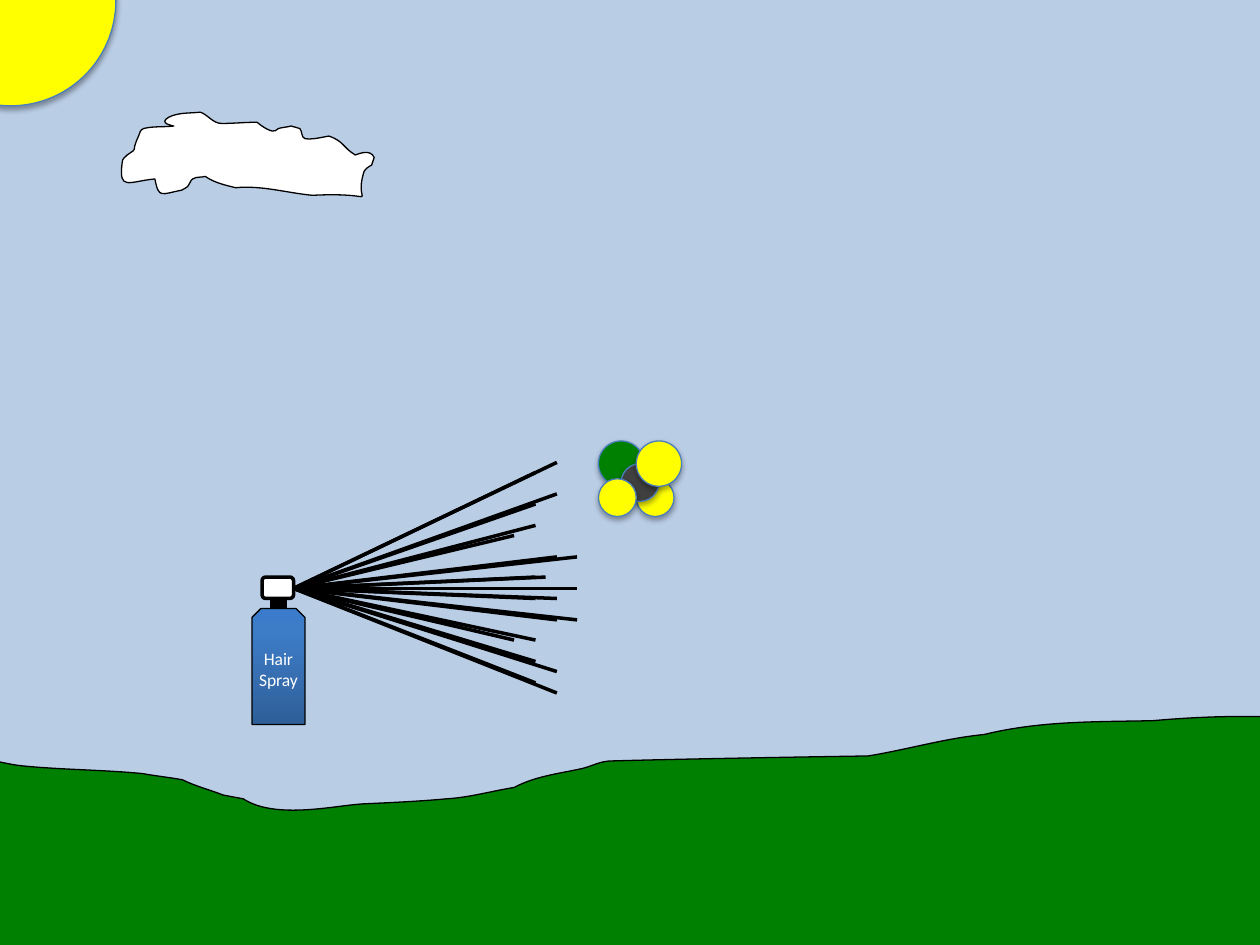
"""Build a slide of a hair spray can and a drifting molecule in a landscape."""
from copy import deepcopy
from dataclasses import dataclass

from lxml import etree
from pptx import Presentation
from pptx.dml.color import RGBColor
from pptx.enum.shapes import MSO_CONNECTOR, MSO_SHAPE
from pptx.enum.text import MSO_ANCHOR, PP_ALIGN
from pptx.oxml.ns import qn
from pptx.util import Inches, Pt

OVAL = MSO_SHAPE.OVAL
CAN = MSO_SHAPE.SNIP_2_SAME_RECTANGLE
NOZZLE = MSO_SHAPE.ROUNDED_RECTANGLE
STRAIGHT = MSO_CONNECTOR.STRAIGHT
MIDDLE = MSO_ANCHOR.MIDDLE
CENTER = PP_ALIGN.CENTER

COLORS = {
    "sky": "B9CDE5", "white": "FFFFFF", "black": "000000", "green": "008000",
    "yellow": "FFFF00", "carbon": "404040", "rim": "4B7EBC",
    "can_dark": "2F5F99", "can_mid": "3D7CC7", "can_light": "3A7CCB",
}
CAN_STOPS = [(0, "can_dark"), (0.8, "can_mid"), (1, "can_light")]
FRAME = {"margin_left": 0, "margin_top": 0, "margin_right": 0,
         "margin_bottom": 0, "word_wrap": True, "vertical_anchor": MIDDLE}
FONT = {"name": "Calibri", "size": Pt(10)}
SHADOW = {"blurRad": "40000", "dist": "23000", "dir": "5400000", "rotWithShape": "0"}


@dataclass
class Ball:
    x: float
    y: float
    size: float
    color: str


@dataclass
class Curve:
    color: str
    start: tuple[float, float]
    beziers: list[tuple[float, ...]]


SUN = Ball(-0.75, -0.83, 1.67, "yellow")
ATOMS = [
    Ball(5.05, 3.8, 0.3, "yellow"),
    Ball(4.75, 3.5, 0.36, "green"),
    Ball(4.93, 3.68, 0.3, "carbon"),
    Ball(5.05, 3.5, 0.36, "yellow"),
    Ball(4.75, 3.8, 0.3, "yellow"),
]
JET = (2.33, 4.67)
SPRAYS = [
    [(4.42, 3.67), (4.42, 5.5), (4.58, 4.67), (4.08, 5.08), (4.08, 4.25), (4.58, 4.92),
     (4.42, 4.75), (4.25, 5.25), (4.25, 4), (4.58, 4.42), (4.33, 4.58)],
    [(4.25, 3.75), (4.42, 4.67), (4.25, 5.08), (4.25, 4.17), (4.42, 4.92), (4.25, 4.75),
     (4.42, 5.33), (4.25, 5.42), (4.42, 3.92), (4.42, 4.42), (4.25, 4.58)],
]
CLOUD = Curve("white", (1.38, 1), [
    (1.3, 1.01, 1.22, 1, 1.14, 1.02), (1.11, 1.03, 1.11, 1.06, 1.1, 1.08),
    (1.03, 1.23, 1.11, 1.16, 1.01, 1.23), (0.99, 1.25, 0.97, 1.26, 0.97, 1.29),
    (0.94, 1.52, 1.02, 1.44, 1.23, 1.42), (1.26, 1.58, 1.28, 1.54, 1.44, 1.51),
    (1.46, 1.5, 1.48, 1.49, 1.49, 1.48), (1.51, 1.46, 1.51, 1.43, 1.53, 1.42),
    (1.56, 1.4, 1.6, 1.41, 1.63, 1.4), (1.7, 1.45, 1.79, 1.47, 1.87, 1.49),
    (2.08, 1.47, 2.27, 1.53, 2.48, 1.55), (3.08, 1.52, 2.79, 1.67, 2.89, 1.36),
    (2.9, 1.34, 2.93, 1.32, 2.95, 1.31), (2.95, 1.29, 2.97, 1.27, 2.97, 1.25),
    (2.94, 1.18, 2.85, 1.22, 2.82, 1.23), (2.72, 1.17, 2.73, 1.12, 2.61, 1.08),
    (2.55, 1.09, 2.48, 1.11, 2.42, 1.1), (2.39, 1.09, 2.4, 1.04, 2.38, 1.02),
    (2.36, 1.01, 2.33, 1.01, 2.31, 1), (2.28, 1.01, 2.24, 1.01, 2.21, 1.02),
    (2.19, 1.03, 2.18, 1.05, 2.16, 1.04), (2.11, 1.03, 2.04, 0.97, 2.04, 0.97),
    (1.95, 0.97, 1.85, 0.98, 1.76, 0.98), (1.69, 0.98, 1.65, 0.91, 1.59, 0.89),
    (1.51, 0.9, 1.42, 0.89, 1.34, 0.93), (1.25, 0.98, 1.38, 1, 1.38, 1),
])
GROUND = Curve("green", (-0.17, 6.02), [
    (-0.05, 6.03, 0.07, 6.07, 0.19, 6.08), (0.5, 6.11, 0.82, 6.11, 1.13, 6.14),
    (1.24, 6.16, 1.35, 6.17, 1.45, 6.19), (1.55, 6.24, 1.67, 6.27, 1.77, 6.31),
    (1.82, 6.32, 1.93, 6.34, 1.93, 6.34), (2.19, 6.51, 2.67, 6.39, 2.89, 6.38),
    (3.11, 6.37, 3.33, 6.36, 3.55, 6.34), (3.72, 6.33, 3.9, 6.28, 4.08, 6.25),
    (4.25, 6.16, 4.44, 6.14, 4.62, 6.1), (4.7, 6.08, 4.77, 6.04, 4.85, 6.04),
    (5.53, 6.02, 6.89, 6, 6.89, 6), (7.2, 5.95, 7.5, 5.86, 7.81, 5.83),
    (8.26, 5.72, 8.69, 5.73, 9.15, 5.72), (9.71, 5.67, 10.27, 5.67, 10.81, 5.76),
    (10.9, 5.87, 10.89, 5.94, 10.93, 6.08), (10.94, 6.25, 10.93, 6.46, 10.98, 6.63),
    (10.99, 6.82, 11, 7.02, 11, 7.21), (11, 7.46, 11.16, 7.99, 10.81, 8.06),
    (9.37, 8.02, 7.92, 8.07, 6.47, 8.1), (6.17, 8.12, 5.87, 8.11, 5.57, 8.14),
    (5.52, 8.14, 5.47, 8.17, 5.42, 8.17), (5.32, 8.19, 5.23, 8.19, 5.13, 8.19),
    (4.95, 8.22, 4.78, 8.24, 4.59, 8.25), (4.16, 8.31, 3.89, 8.28, 3.38, 8.27),
    (2.87, 8.23, 2.38, 8.21, 1.87, 8.19), (1.32, 8.2, 1.06, 8.23, 0.57, 8.19),
    (0.32, 8.17, 0.07, 8.08, -0.17, 8.02), (-0.22, 7.84, -0.2, 7.92, -0.23, 7.78),
    (-0.22, 7.58, -0.23, 7.44, -0.17, 7.27), (-0.19, 6.99, -0.19, 6.71, -0.21, 6.44),
    (-0.21, 6.37, -0.24, 6.23, -0.24, 6.23), (-0.24, 6.16, -0.25, 6.09, -0.23, 6.02),
    (-0.22, 6, -0.18, 5.98, -0.15, 5.98), (-0.13, 5.99, -0.1, 6.02, -0.11, 6.04),
    (-0.12, 6.06, -0.15, 6.03, -0.17, 6.02),
])


def rgb(name: str) -> RGBColor:
    return RGBColor.from_string(COLORS[name])


def set_all(target: object, values: dict) -> None:
    for key, value in values.items():
        setattr(target, key, value)


def paint(sp, fill: str, line: str = "black", width: float = 0.75) -> None:
    sp.shadow.inherit = False
    sp.fill.solid()
    sp.fill.fore_color.rgb = rgb(fill)
    sp.line.color.rgb = rgb(line)
    sp.line.width = Pt(width)


def add_preset(shapes, kind, x: float, y: float, w: float, h: float):
    return shapes.add_shape(kind, Inches(x), Inches(y), Inches(w), Inches(h))


def add_curve(shapes, curve: Curve) -> None:
    builder = shapes.build_freeform(*map(Inches, curve.start))
    points = [(Inches(b[i]), Inches(b[i + 1])) for b in curve.beziers for i in (0, 2, 4)]
    builder.add_line_segments(points, close=True)
    sp = builder.convert_to_shape()
    segments = list(sp._element.spPr.iter(qn("a:lnTo")))
    for i in range(0, len(points), 3):
        bezier = etree.Element(qn("a:cubicBezTo"))
        segments[i].addprevious(bezier)
        for segment in segments[i:i + 3]:
            bezier.append(segment[0])
            segment.getparent().remove(segment)
    paint(sp, curve.color)


def add_ball(shapes, ball: Ball) -> None:
    sp = add_preset(shapes, OVAL, ball.x, ball.y, ball.size, ball.size)
    paint(sp, ball.color, "rim")
    effects = sp._element.spPr.find(qn("a:effectLst"))
    shadow = etree.SubElement(effects, qn("a:outerShdw"), SHADOW)
    color = etree.SubElement(shadow, qn("a:srgbClr"), val=COLORS["black"])
    etree.SubElement(color, qn("a:alpha"), val="35000")


def add_stroke(shapes, start: tuple[float, float], end: tuple[float, float],
               width: float = 2) -> None:
    line = shapes.add_connector(STRAIGHT, *map(Inches, start + end))
    line.line.color.rgb = rgb("black")
    line.line.width = Pt(width)
    etree.SubElement(line._element.spPr, qn("a:effectLst"))


def add_can(shapes) -> None:
    sp = add_preset(shapes, CAN, 2, 4.83, 0.42, 0.92)
    paint(sp, "can_mid")
    sp.fill.gradient()
    sp.fill.gradient_angle = 90
    stops = sp._element.spPr.find(qn("a:gradFill")).find(qn("a:gsLst"))
    stops.append(deepcopy(stops[-1]))
    for stop, (position, color) in zip(sp.fill.gradient_stops, CAN_STOPS):
        stop.position = position
        stop.color.rgb = rgb(color)
    tf = sp.text_frame
    set_all(tf, FRAME)
    tf.text = "Hair\nSpray"
    for p in tf.paragraphs:
        p.alignment = CENTER
        set_all(p.runs[0].font, FONT)
        p.runs[0].font.color.rgb = rgb("white")


def main() -> None:
    prs = Presentation()
    prs.slide_width, prs.slide_height = Inches(10), Inches(7.5)
    s = prs.slides.add_slide(prs.slide_layouts[6])
    s.background.fill.solid()
    s.background.fill.fore_color.rgb = rgb("sky")
    add_curve(s.shapes, CLOUD)
    add_curve(s.shapes, GROUND)
    add_ball(s.shapes, SUN)
    for ends in SPRAYS:
        spray = s.shapes.add_group_shape().shapes
        for end in ends:
            add_stroke(spray, JET, end)
    bottle = s.shapes.add_group_shape().shapes
    add_can(bottle)
    paint(add_preset(bottle, NOZZLE, 2.08, 4.58, 0.25, 0.17), "white", width=2)
    add_stroke(bottle, (2.21, 4.75), (2.21, 4.83), 10)
    molecule = s.shapes.add_group_shape().shapes
    for atom in ATOMS:
        add_ball(molecule, atom)
    prs.save("out.pptx")


if __name__ == "__main__":
    main()
